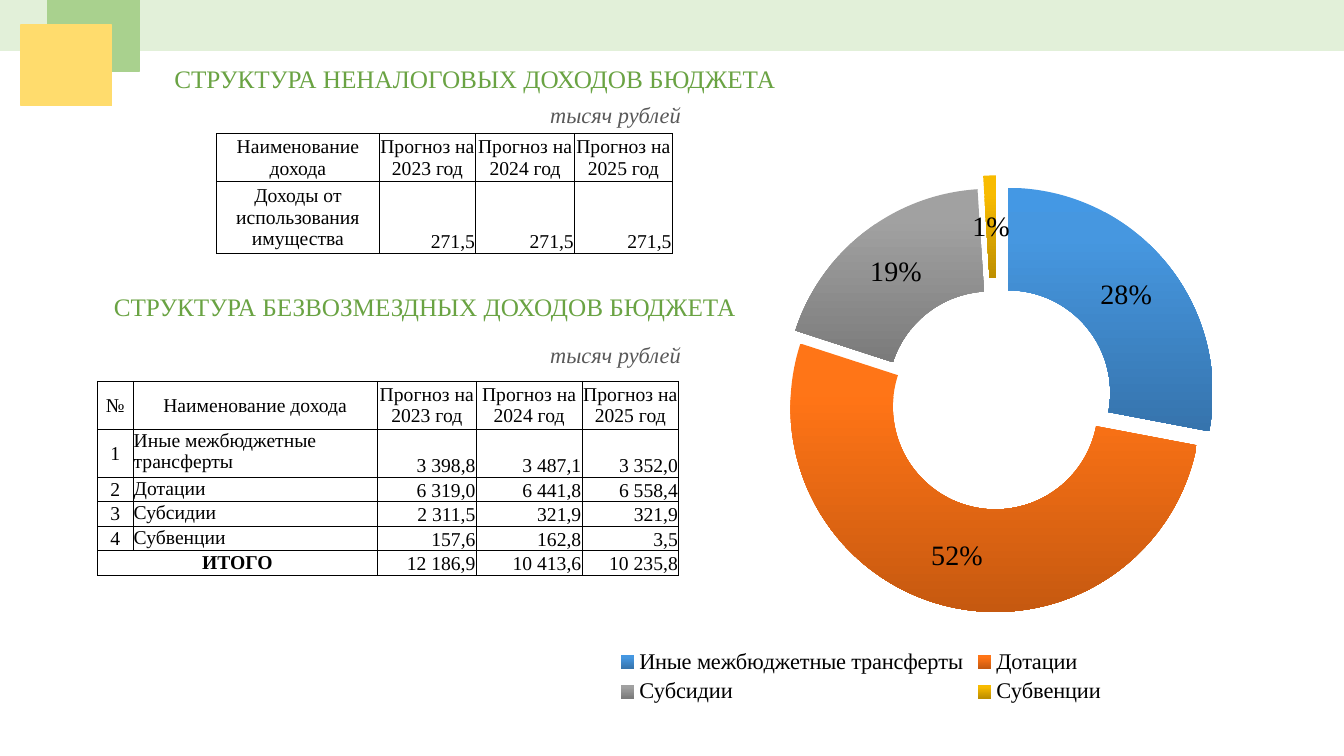
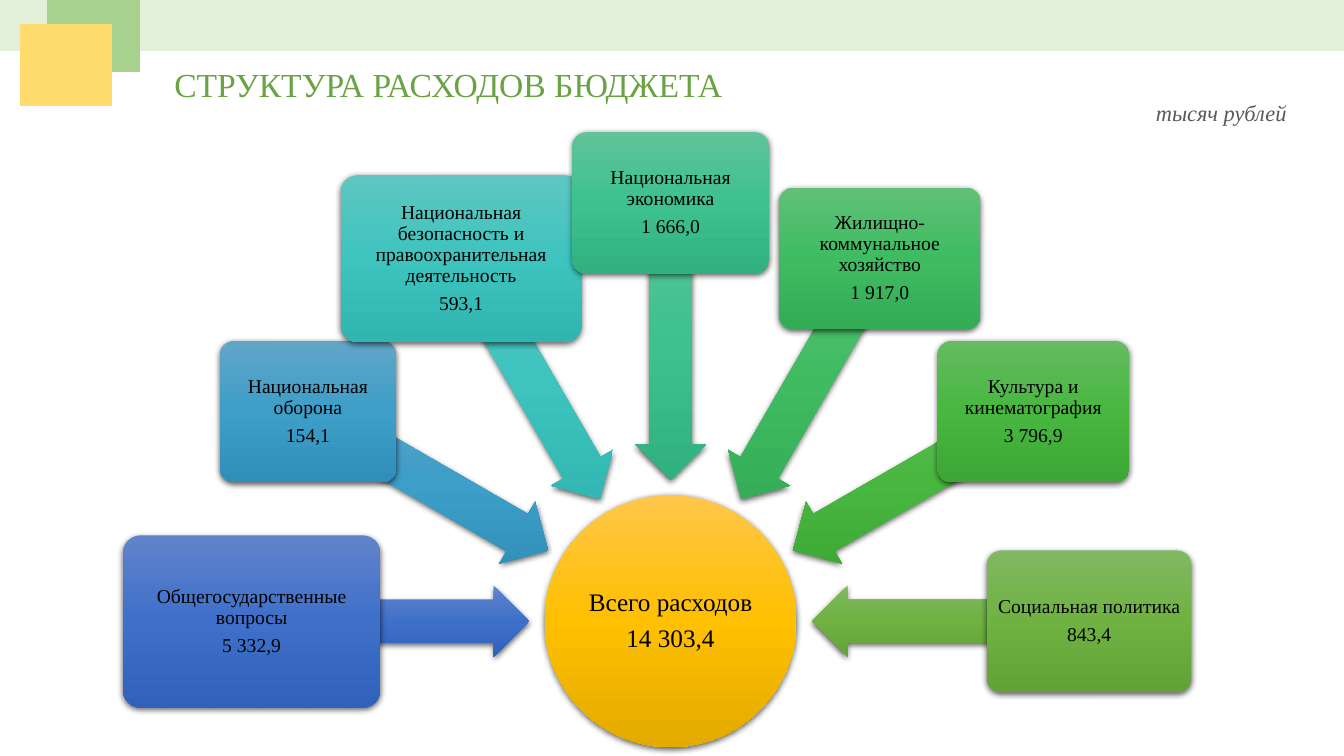
"""Builds two slides on the structure of budget income and spending."""
from copy import deepcopy
from dataclasses import dataclass
from math import cos, radians, sin

from lxml import etree
from pptx import Presentation
from pptx.chart.data import CategoryChartData
from pptx.dml.color import RGBColor
from pptx.enum.chart import XL_CHART_TYPE, XL_LEGEND_POSITION
from pptx.enum.shapes import MSO_SHAPE
from pptx.enum.text import MSO_ANCHOR, PP_ALIGN
from pptx.oxml.ns import qn
from pptx.util import Pt

DOUGHNUT = XL_CHART_TYPE.DOUGHNUT_EXPLODED
LEGEND_BOTTOM = XL_LEGEND_POSITION.BOTTOM
RECTANGLE = MSO_SHAPE.RECTANGLE
ROUNDED = MSO_SHAPE.ROUNDED_RECTANGLE
ELLIPSE = MSO_SHAPE.OVAL
LEFT_ARROW = MSO_SHAPE.LEFT_ARROW
CENTERED = (PP_ALIGN.CENTER, MSO_ANCHOR.MIDDLE)
NAME = (PP_ALIGN.LEFT, MSO_ANCHOR.TOP)
NUMBER = (PP_ALIGN.RIGHT, MSO_ANCHOR.BOTTOM)


@dataclass(frozen=True)
class Theme:
    font: str = "Times New Roman"
    chart_font: str = "Calibri"
    black: str = "000000"
    title: str = "6AA343"
    unit: str = "595959"
    band: str = "E2F0D9"
    green: str = "A9D18E"
    yellow: str = "FFDC6D"
    title_size: int = 24
    heading_size: int = 18
    hub_size: int = 18
    unit_size: int = 16
    legend_size: int = 16
    body_size: int = 14
    label_size: int = 20
    chart_size: int = 10
    hub: tuple = ("FFC64B", "FFC000", "E3AB00")
    slices: tuple = (
        ("4498E4", "4697E0", "3674AD"),
        ("FF7517", "FF7416", "C65910"),
        ("A1A1A1", "A0A0A0", "7B7B7B"),
        ("F8BB00", "F7BA00", "BE8F00"),
    )
    branches: tuple = (
        ("6183CB", "3E70CA", "3062BB"),
        ("61A6C8", "3D9EC7", "308FB8"),
        ("60C6C1", "3DC4BF", "30B5B0"),
        ("60C39A", "3DC18F", "31B080"),
        ("60C077", "3FBC62", "33AC55"),
        ("65BC61", "48B740", "3CA735"),
        ("81B861", "6FB242", "62A336"),
    )


class BudgetDeck:
    def __init__(self, theme):
        self.theme = theme
        self.deck = Presentation()
        self.deck.slide_width, self.deck.slide_height = Pt(960), Pt(540)
        self.page = None

    def new_page(self):
        self.page = self.deck.slides.add_slide(self.deck.slide_layouts[6])
        self.band(0, 0, 960, 36, self.theme.band)
        self.band(33.8, 0, 65.5, 51.1, self.theme.green)
        self.band(15.1, 18, 64.8, 57.6, self.theme.yellow)

    def shape(self, kind, left, top, width, height):
        shape = self.page.shapes.add_shape(kind, Pt(left), Pt(top), Pt(width), Pt(height))
        shape.shadow.inherit = False
        return shape

    def band(self, left, top, width, height, color):
        band = self.shape(RECTANGLE, left, top, width, height)
        band.fill.solid()
        band.fill.fore_color.rgb = RGBColor.from_string(color)
        band.line.color.rgb = RGBColor.from_string(color)
        band.line.width = Pt(1)

    def style(self, font, size, color=None, bold=False, italic=False, name=None):
        font.name = name or self.theme.font
        font.size = Pt(size)
        font.bold, font.italic = bold, italic
        font.color.rgb = RGBColor.from_string(color or self.theme.black)

    def line_of_text(self, text, left, top, width, height, size, color, italic=False):
        box = self.page.shapes.add_textbox(Pt(left), Pt(top), Pt(width), Pt(height))
        box.text_frame.text = text
        box.text_frame.word_wrap = False
        self.style(box.text_frame.paragraphs[0].runs[0].font, size, color, italic=italic)

    def heading(self, text, left, top, width, size):
        self.line_of_text(text, left, top, width, 1.2 * size + 7.2, size, self.theme.title)

    def unit(self, left, top):
        theme = self.theme
        self.line_of_text("тысяч рублей", left, top, 109.4, 26.6, theme.unit_size, theme.unit, italic=True)

    def gradient(self, fill, colors, middle):
        fill.gradient()
        fill.gradient_angle = 270
        first = fill.gradient_stops[0]._gs
        first.addnext(deepcopy(first))
        first.getparent().getparent().set("rotWithShape", "0")
        for stop, color, position in zip(fill.gradient_stops, colors, (0, middle, 1)):
            stop.color.rgb = RGBColor.from_string(color)
            stop.position = position

    def glossy(self, kind, left, top, width, height, colors):
        shape = self.shape(kind, left, top, width, height)
        self.gradient(shape.fill, colors, 0.5)
        shape.line.fill.background()
        effects = shape._element.spPr.find(qn("a:effectLst"))
        shadow = etree.SubElement(effects, qn("a:outerShdw"), blurRad=str(Pt(4.5)), dist=str(Pt(1.5)),
                                  dir="5400000", algn="ctr", rotWithShape="0")
        color = etree.SubElement(shadow, qn("a:srgbClr"), val=self.theme.black)
        etree.SubElement(color, qn("a:alpha"), val="63000")
        return shape

    def caption(self, shape, lines, size, margin):
        frame = shape.text_frame
        frame.text = "\n".join(lines)
        frame.word_wrap = True
        frame.vertical_anchor = MSO_ANCHOR.MIDDLE
        frame.margin_left = frame.margin_right = frame.margin_top = frame.margin_bottom = Pt(margin)
        for para in frame.paragraphs:
            para.alignment = PP_ALIGN.CENTER
            para.line_spacing = 0.9
            para.space_after = Pt(0.35 * size)
            self.style(para.runs[0].font, size)

    def arrow(self, center_x, center_y, rotation, colors):
        width, height = 198, 51
        arrow = self.glossy(LEFT_ARROW, center_x - width / 2, center_y - height / 2, width, height, colors)
        arrow.adjustments[0], arrow.adjustments[1] = 0.6, 0.5
        arrow.rotation = rotation

    def branch(self, lines, bounds, colors):
        box = self.glossy(ROUNDED, *bounds, colors)
        box.adjustments[0] = 0.1
        self.caption(box, lines, self.theme.body_size, 3)

    def hub(self, lines, center_x, center_y, diameter):
        left, top = center_x - diameter / 2, center_y - diameter / 2
        hub = self.glossy(ELLIPSE, left, top, diameter, diameter, self.theme.hub)
        self.caption(hub, lines, self.theme.hub_size, 1)

    def cell(self, cell, text, placement, bold):
        cell.text = text
        cell.margin_left = cell.margin_right = cell.margin_top = Pt(0.5)
        cell.margin_bottom = 0
        para = cell.text_frame.paragraphs[0]
        para.alignment, cell.vertical_anchor = placement
        for span in para.runs:
            self.style(span.font, self.theme.body_size, bold=bold)
        properties = cell._tc.get_or_add_tcPr()
        for side in ("a:lnL", "a:lnR", "a:lnT", "a:lnB"):
            line = etree.SubElement(properties, qn(side), w=str(Pt(0.5)))
            color = etree.SubElement(line, qn("a:solidFill"))
            etree.SubElement(color, qn("a:srgbClr"), val=self.theme.black)
        cell.fill.background()

    def table(self, left, top, widths, heights, rows, placements, total=None):
        frame = self.page.shapes.add_table(len(rows), len(widths), Pt(left), Pt(top),
                                           Pt(sum(widths)), Pt(sum(heights)))
        table = frame.table
        table.first_row = table.horz_banding = False
        for column, width in zip(table.columns, widths):
            column.width = Pt(width)
        for r, (row, height) in enumerate(zip(rows, heights)):
            table.rows[r].height = Pt(height)
            for c, text in enumerate(row):
                placement = placements[c] if r else CENTERED
                self.cell(table.cell(r, c), text, placement, bool(total) and text == total)
        if total:
            last = len(rows) - 1
            table.cell(last, 0).merge(table.cell(last, 1))

    def doughnut(self, left, top, width, height, shares, explosions, layout):
        theme = self.theme
        data = CategoryChartData()
        data.categories = list(shares)
        data.add_series("Доходы", list(shares.values()))
        chart = self.page.shapes.add_chart(DOUGHNUT, Pt(left), Pt(top), Pt(width), Pt(height), data).chart
        chart.has_title = False
        self.style(chart.font, theme.chart_size, name=theme.chart_font)
        chart.has_legend = True
        chart.legend.position = LEGEND_BOTTOM
        chart.legend.include_in_layout = False
        self.style(chart.legend.font, theme.legend_size)
        plot = chart.plots[0]
        plot.vary_by_categories = True
        plot.has_data_labels = True
        labels = plot.data_labels
        labels.show_value, labels.show_percentage = False, True
        labels.number_format, labels.number_format_is_linked = "0%", False
        self.style(labels.font, theme.label_size)
        for index, (colors, explosion) in enumerate(zip(theme.slices, explosions)):
            point = plot.series[0].points[index]
            self.gradient(point.format.fill, colors, 0.2)
            point.format.line.fill.background()
            self.explode(point.format.fill.gradient_stops[0]._gs, explosion)
        self.place_plot(chart, layout)

    def explode(self, stop, explosion):
        properties = next(stop.iterancestors(qn("c:spPr")))
        for old in properties.getparent().findall(qn("c:explosion")):
            properties.getparent().remove(old)
        offset = etree.Element(qn("c:explosion"), val=str(explosion))
        properties.addprevious(offset)

    def place_plot(self, chart, layout):
        area = next(chart._chartSpace.iter(qn("c:plotArea")))
        for old in area.findall(qn("c:layout")):
            area.remove(old)
        holder = etree.Element(qn("c:layout"))
        area.insert(0, holder)
        manual = etree.SubElement(holder, qn("c:manualLayout"))
        settings = {"layoutTarget": "inner", "xMode": "edge", "yMode": "edge"}
        settings.update(zip("xywh", layout))
        for name, value in settings.items():
            etree.SubElement(manual, qn("c:" + name), val=str(value))


def income_page(deck):
    deck.new_page()
    size = deck.theme.heading_size
    years = [f"Прогноз на {year} год" for year in (2023, 2024, 2025)]
    deck.heading("СТРУКТУРА НЕНАЛОГОВЫХ ДОХОДОВ БЮДЖЕТА", 117.4, 41.8, 447.8, size)
    deck.unit(385.9, 68.4)
    deck.table(154.8, 95.3, (116, 69, 70.6, 69.8), (34.3, 51), [
        ["Наименование дохода", *years],
        ["Доходы от использования имущества", "271,5", "271,5", "271,5"],
    ], (CENTERED, NUMBER, NUMBER, NUMBER))
    deck.heading("СТРУКТУРА БЕЗВОЗМЕЗДНЫХ ДОХОДОВ БЮДЖЕТА", 74.2, 204.5, 463, size)
    deck.unit(385.9, 239.8)
    deck.table(69.6, 272.2, (25.4, 174.6, 70.6, 75.6, 69), (34.3, 34.3, 17.5, 17.5, 17.5, 17.5), [
        ["№", "Наименование дохода", *years],
        ["1", "Иные межбюджетные трансферты", "3 398,8", "3 487,1", "3 352,0"],
        ["2", "Дотации", "6 319,0", "6 441,8", "6 558,4"],
        ["3", "Субсидии", "2 311,5", "321,9", "321,9"],
        ["4", "Субвенции", "157,6", "162,8", "3,5"],
        ["ИТОГО", "", "12 186,9", "10 413,6", "10 235,8"],
    ], (CENTERED, NAME, NUMBER, NUMBER, NUMBER), total="ИТОГО")
    shares = {"Иные межбюджетные трансферты": 28, "Дотации": 52, "Субсидии": 19, "Субвенции": 1}
    deck.doughnut(301.7, 54.7, 626.4, 451.4, shares, (14, 5, 10, 21), (0.39, 0.15, 0.53, 0.73))


def spending_page(deck):
    deck.new_page()
    deck.heading("СТРУКТУРА РАСХОДОВ БЮДЖЕТА", 117.4, 41.8, 409.7, deck.theme.title_size)
    deck.unit(818.6, 67.3)
    center_x, center_y, radius = 479, 443.7, 200
    deck.hub(("Всего расходов", "14 303,4"), center_x, center_y, 180)
    branches = (
        ("Общегосударственные вопросы", "5 332,9", (88, 382.4, 183.6, 123)),
        ("Национальная оборона", "154,1", (157, 243.5, 126, 101)),
        ("Национальная безопасность и правоохранительная деятельность", "593,1", (243.4, 125.2, 172, 119)),
        ("Национальная экономика", "1 666,0", (408.8, 94.4, 140.4, 101)),
        ("Жилищно-коммунальное хозяйство", "1 917,0", (556.5, 134, 144, 101)),
        ("Культура и кинематография", "3 796,9", (669.6, 243.5, 137, 101)),
        ("Социальная политика", "843,4", (705, 393.2, 146, 101)),
    )
    for index, (name, amount, bounds) in enumerate(branches):
        rotation = 180 + 30 * index
        angle = radians(rotation)
        colors = deck.theme.branches[index]
        deck.arrow(center_x + radius * cos(angle), center_y + radius * sin(angle), rotation % 360, colors)
        deck.branch((name, amount), bounds, colors)


def main():
    deck = BudgetDeck(Theme())
    income_page(deck)
    spending_page(deck)
    deck.deck.save("out.pptx")


if __name__ == "__main__":
    main()
